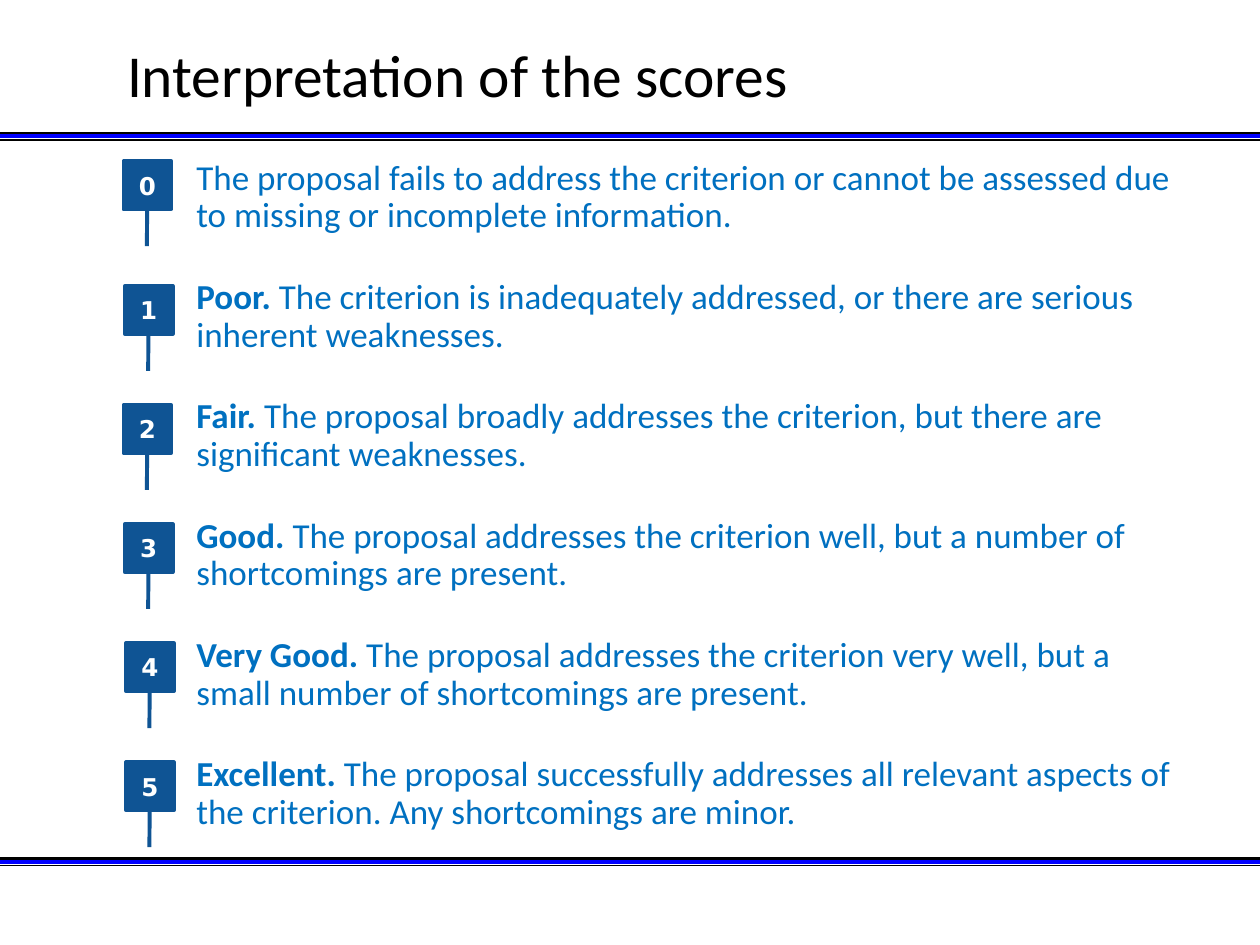
import collections

import pptx
import pptx.dml.color
import pptx.enum.shapes
import pptx.enum.text
import pptx.oxml.ns
import pptx.util

COLORS = {
    "title": "000000",
    "text": "0070C0",
    "badge": "0F5494",
    "badge_text": "FFFFFF",
    "rule_edge": "000000",
    "rule_core": "0000FF",
}
TEXT_FONT = "Calibri"
BADGE_FONT = "DejaVu Sans"

# The slide is a grid of 100 columns by 75 rows.
CELL = pptx.util.Inches(0.1)
COLUMNS, ROWS = 100, 75

Box = collections.namedtuple("Box", "left top width height")
TITLE_BOX = Box(9.1, 3, 86.2, 6.4)
BODY_BOX = Box(14.6, 12.2, 80.8, 55.4)
BADGE_BOX = Box(9.8, 12.8, 4, 51.5)
HEADER_RULE = Box(0, 10.6, COLUMNS, 0.5)
FOOTER_RULE = Box(0, 68.2, COLUMNS, 0.5)

SCORES = [
    ("", "The proposal fails to address the criterion or cannot be assessed due "
         "to missing or incomplete information."),
    ("Poor. ", "The criterion is inadequately addressed, or there are serious "
               "inherent weaknesses."),
    ("Fair. ", "The proposal broadly addresses the criterion, but there are "
               "significant weaknesses."),
    ("Good. ", "The proposal addresses the criterion well, but a number of "
               "shortcomings are present."),
    ("Very Good. ", "The proposal addresses the criterion very well, but a small "
                    "number of shortcomings are present."),
    ("Excellent. ", "The proposal successfully addresses all relevant aspects of "
                    "the criterion. Any shortcomings are minor."),
]

BADGE_SIZE = 3.8
FIRST_BADGE_RAISE = 0.45
BADGE_SHIFTS = [0, 0.1, 0, 0.1, 0.2, 0.2]
CALLOUT_POINTS = [0.998, 0.496, 1.771, 0.489]


def cells(*values):
    """Turn grid cells into lengths."""
    return [round(value * CELL) for value in values]


def color(name):
    return pptx.dml.color.RGBColor.from_string(COLORS[name])


def add_run(paragraph, text, font_name, size, color_name, bold=False):
    run = paragraph.add_run()
    run.text = text
    run.font.name = font_name
    run.font.size = pptx.util.Pt(size)
    run.font.bold = bold
    run.font.color.rgb = color(color_name)


def add_text_frame(slide, box):
    frame = slide.shapes.add_textbox(*cells(*box)).text_frame
    frame.word_wrap = True
    return frame


def add_rule(slide, box):
    """Draw a blue line between a thick and a thin black line."""
    strands = [(0, "rule_edge", 2.25), (1, "rule_edge", 1), (0.45, "rule_core", 2.25)]
    for share, color_name, width in strands:
        height = box.top + share * box.height
        line = slide.shapes.add_connector(
            pptx.enum.shapes.MSO_CONNECTOR.STRAIGHT,
            *cells(box.left, height, box.left + box.width, height))
        line.line.color.rgb = color(color_name)
        line.line.width = pptx.util.Pt(width)
        properties = line.element.spPr
        properties.append(properties.makeelement(pptx.oxml.ns.qn("a:effectLst"), {}))


def add_title(slide, box):
    frame = add_text_frame(slide, box)
    frame.vertical_anchor = pptx.enum.text.MSO_ANCHOR.MIDDLE
    paragraph = frame.paragraphs[0]
    paragraph.line_spacing = 0.9
    add_run(paragraph, "Interpretation of the scores", TEXT_FONT, 34, "title")


def add_descriptions(slide, box):
    frame = add_text_frame(slide, box)
    for index, (grade, description) in enumerate(SCORES):
        paragraph = frame.add_paragraph() if index else frame.paragraphs[0]
        paragraph.line_spacing = 0.9
        paragraph.space_before = pptx.util.Pt(10 if index else 0)
        paragraph.space_after = pptx.util.Pt(15)
        if grade:
            add_run(paragraph, grade, TEXT_FONT, 20, "text", bold=True)
        add_run(paragraph, description, TEXT_FONT, 20, "text")


def add_badge(slide, box, label):
    badge = slide.shapes.add_shape(
        pptx.enum.shapes.MSO_SHAPE.LINE_CALLOUT_1, *cells(*box))
    for index, value in enumerate(CALLOUT_POINTS):
        badge.adjustments[index] = value
    badge.shadow.inherit = False
    badge.fill.solid()
    badge.fill.fore_color.rgb = color("badge")
    badge.line.color.rgb = color("badge")
    badge.line.width = pptx.util.Pt(2.25)
    frame = badge.text_frame
    frame.word_wrap = False
    frame.vertical_anchor = pptx.enum.text.MSO_ANCHOR.MIDDLE
    paragraph = frame.paragraphs[0]
    paragraph.alignment = pptx.enum.text.PP_ALIGN.CENTER
    add_run(paragraph, label, BADGE_FONT, 14, "badge_text", bold=True)


def add_badges(slide, box):
    """Space the badges evenly, with the first one raised a little."""
    first_top = box.top + FIRST_BADGE_RAISE
    pitch = (box.height - FIRST_BADGE_RAISE - BADGE_SIZE) / (len(SCORES) - 1)
    for score, shift in enumerate(BADGE_SHIFTS):
        top = first_top + score * pitch if score else box.top
        add_badge(slide, Box(box.left + shift, top, BADGE_SIZE, BADGE_SIZE), str(score))


def main():
    presentation = pptx.Presentation()
    presentation.slide_width, presentation.slide_height = cells(COLUMNS, ROWS)
    slide = presentation.slides.add_slide(presentation.slide_layouts[6])
    for rule in (HEADER_RULE, FOOTER_RULE):
        add_rule(slide, rule)
    add_title(slide, TITLE_BOX)
    add_descriptions(slide, BODY_BOX)
    add_badges(slide, BADGE_BOX)
    presentation.save("out.pptx")


if __name__ == "__main__":
    main()
